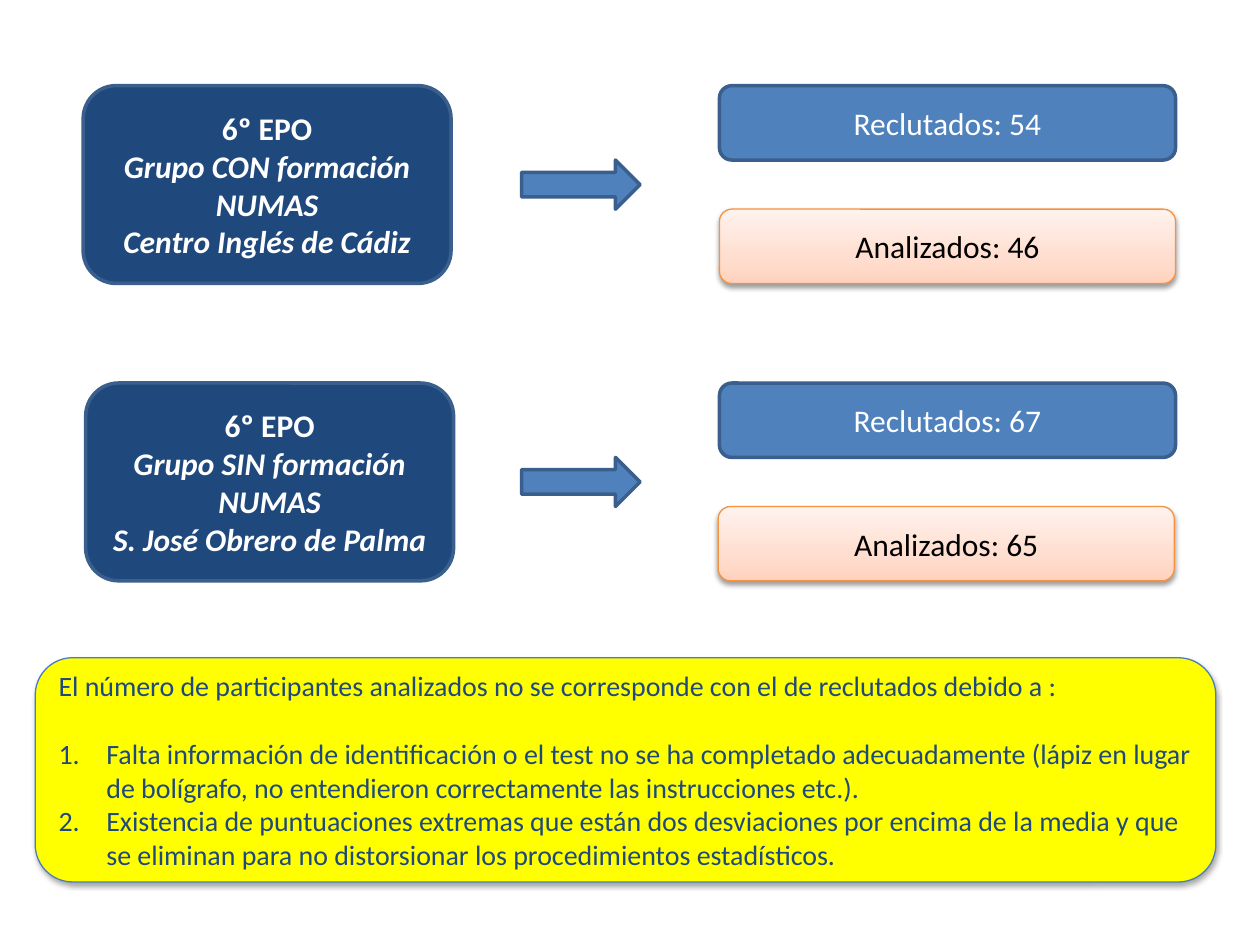
import copy
from dataclasses import dataclass

import pptx
import pptx.dml.color
import pptx.enum.shapes
import pptx.enum.text
import pptx.oxml
import pptx.oxml.ns
import pptx.util

Inches = pptx.util.Inches
Pt = pptx.util.Pt
qn = pptx.oxml.ns.qn
KIND = pptx.enum.shapes.MSO_SHAPE
ALIGN = pptx.enum.text.PP_ALIGN

COLORS = {
    "navy": "1F497D", "blue": "4F81BD", "edge": "3A5F8C", "white": "FFFFFF",
    "black": "000000", "orange": "F69240", "yellow": "FFFF00", "rim": "4B7EBC",
}
PEACH = [(0, "FFD2BD"), (0.35, "FFDED0"), (1, "FFF2ED")]


@dataclass
class Group:
    top: float
    left: float
    name: str
    school: str
    start: int
    final: int
    end: float  # left edge of the lower box


GROUPS = [
    Group(0.68, 0.66, "Grupo CON formación NUMAS", "Centro Inglés de Cádiz", 54, 46, 5.71),
    Group(3.04, 0.68, "Grupo SIN formación NUMAS", "S. José Obrero de Palma", 67, 65, 5.7),
]
INTRO = "El número de participantes analizados no se corresponde con el de reclutados debido a :"
CAUSES = [
    "Falta información de identificación o el test no se ha completado adecuadamente "
    "(lápiz en lugar de bolígrafo, no entendieron correctamente las instrucciones etc.).",
    "Existencia de puntuaciones extremas que están dos desviaciones por encima de la media "
    "y que se eliminan para no distorsionar los procedimientos estadísticos.",
]


def rgb(code: str):
    return pptx.dml.color.RGBColor.from_string(code)


def box(slide, kind, left: float, top: float, width: float, height: float,
        fill: str | None, line: str, weight: float = 2):
    """Draw a shape; with no fill colour it gets the peach gradient."""
    shape = slide.shapes.add_shape(
        kind, Inches(left), Inches(top), Inches(width), Inches(height))
    shape.shadow.inherit = False
    if fill:
        shape.fill.solid()
        shape.fill.fore_color.rgb = rgb(COLORS[fill])
    else:
        blend(shape)
    shape.line.color.rgb = rgb(COLORS[line])
    shape.line.width = Pt(weight)
    shape.text_frame.vertical_anchor = pptx.enum.text.MSO_ANCHOR.MIDDLE
    return shape


def blend(shape) -> None:
    shape.fill.gradient()
    shape.fill.gradient_angle = 90
    stops = shape._element.spPr.find(qn("a:gradFill")).find(qn("a:gsLst"))
    stops.append(copy.deepcopy(stops[0]))
    for stop, (place, code) in zip(shape.fill.gradient_stops, PEACH):
        stop.position = place
        stop.color.rgb = rgb(code)


def shade(shape, alpha: int) -> None:
    """Add a soft shadow straight below the shape."""
    shape._element.spPr.find(qn("a:effectLst")).append(pptx.oxml.parse_xml(
        f'<a:outerShdw {pptx.oxml.ns.nsdecls("a")} blurRad="40000" dist="20000" '
        f'dir="5400000" rotWithShape="0"><a:srgbClr val="{COLORS["black"]}">'
        f'<a:alpha val="{alpha * 1000}"/></a:srgbClr></a:outerShdw>'))


def write(shape, text: str, first: bool = True, size: float = 18, color: str = "white",
          bold: bool = False, italic: bool = False, align=ALIGN.CENTER,
          number: bool = False, before: float = 0) -> None:
    """Write one paragraph into a shape."""
    frame = shape.text_frame
    para = frame.paragraphs[0] if first else frame.add_paragraph()
    para.alignment = align
    if number:
        props = para._p.get_or_add_pPr()
        props.set("marL", str(Inches(0.38)))
        props.set("indent", str(-Inches(0.38)))
        props.append(pptx.oxml.parse_xml(
            f'<a:buAutoNum {pptx.oxml.ns.nsdecls("a")} type="arabicPeriod"/>'))
    if before:
        para.space_before = Pt(before)
    run = para.add_run()
    run.text = text
    font = run.font
    font.name, font.size = "Calibri", Pt(size)
    font.bold, font.italic = bold, italic
    font.color.rgb = rgb(COLORS[color])


def draw(slide, group: Group) -> None:
    """Draw a group, its arrow and its two counts."""
    card = box(slide, KIND.ROUNDED_RECTANGLE, group.left, group.top, 2.92, 1.57, "navy", "edge")
    write(card, "6º EPO", bold=True)
    for text in (group.name, group.school):
        write(card, text, first=False, bold=True, italic=True)

    box(slide, KIND.RIGHT_ARROW, 4.14, group.top + 0.59, 0.94, 0.39, "blue", "edge")

    start = box(slide, KIND.ROUNDED_RECTANGLE, 5.71, group.top, 3.62, 0.59, "blue", "edge")
    write(start, f"Reclutados: {group.start}")
    final = box(slide, KIND.ROUNDED_RECTANGLE, group.end, group.top + 0.98, 3.62, 0.59,
                None, "orange", 0.75)
    shade(final, 38)
    write(final, f"Analizados: {group.final}", color="black")


def main() -> None:
    deck = pptx.Presentation()
    deck.slide_width, deck.slide_height = Inches(10), Inches(7.5)
    slide = deck.slides.add_slide(deck.slide_layouts[6])

    # Groups
    for group in GROUPS:
        draw(slide, group)

    # Note on the excluded pupils
    note = box(slide, KIND.ROUNDED_RECTANGLE, 0.28, 5.22, 9.37, 1.78, "yellow", "rim", 0.75)
    shade(note, 35)
    style = {"size": 16, "color": "navy", "align": ALIGN.LEFT}
    write(note, INTRO, **style)
    for index, cause in enumerate(CAUSES):
        write(note, cause, first=False, number=True, before=0 if index else 19.5, **style)

    deck.save("out.pptx")


if __name__ == "__main__":
    main()
